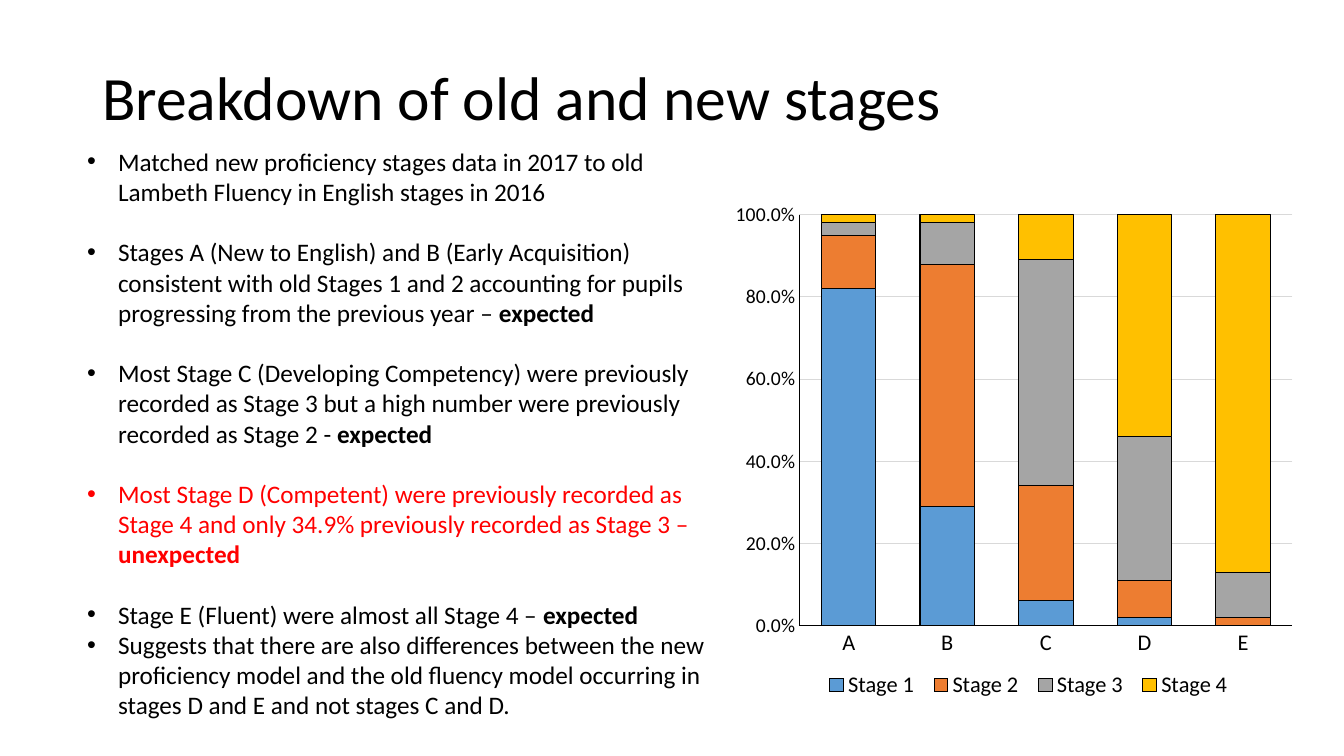
from lxml import etree
from pptx import Presentation
from pptx import util as u
from pptx.chart.data import CategoryChartData
from pptx.dml.color import RGBColor
from pptx.enum import chart as ch, text as tx
from pptx.oxml import ns

EMU_PER_PX = 914400 / 100.8
FONT = "Calibri"
BLACK, RED, GRID = "000000", "FF0000", "D9D9D9"
GAP = 21.5

FINDINGS = [
    ("Matched new proficiency stages data in 2017 to old "
     "Lambeth Fluency in English stages in 2016", "", BLACK, GAP),
    ("Stages A (New to English) and B (Early Acquisition) consistent with old "
     "Stages 1 and 2 accounting for pupils progressing from the previous year – ",
     "expected", BLACK, GAP),
    ("Most Stage C (Developing Competency) were previously recorded as Stage 3 "
     "but a high number were previously recorded as Stage 2 - ",
     "expected", BLACK, GAP),
    ("Most Stage D (Competent) were previously recorded as Stage 4 "
     "and only 34.9% previously recorded as Stage 3 – ", "unexpected", RED, GAP),
    ("Stage E (Fluent) were almost all Stage 4 – ", "expected", BLACK, 0),
    ("Suggests that there are also differences between the new proficiency model "
     "and the old fluency model occurring in stages D and E and not stages C and D.",
     "", BLACK, 0),
]

NEW_STAGES = ["A", "B", "C", "D", "E"]
OLD_STAGES = [
    ("Stage 1", "5B9BD5", [0.82, 0.29, 0.06, 0.02, 0]),
    ("Stage 2", "ED7D31", [0.13, 0.59, 0.28, 0.09, 0.02]),
    ("Stage 3", "A5A5A5", [0.03, 0.1, 0.55, 0.35, 0.11]),
    ("Stage 4", "FFC000", [0.02, 0.02, 0.11, 0.54, 0.87]),
]


def px(length):
    return u.Emu(round(length * EMU_PER_PX))


def rgb(hex_color):
    return RGBColor.from_string(hex_color)


def place(placeholder, left, top, width, height):
    placeholder.left, placeholder.top = px(left), px(top)
    placeholder.width, placeholder.height = px(width), px(height)


def set_font(font, size, color=BLACK, bold=False):
    font.name, font.size, font.bold = FONT, u.Pt(size), bold
    font.color.rgb = rgb(color)


def write(paragraph, words, **font_format):
    run = paragraph.add_run()
    run.text = words
    set_font(run.font, **font_format)


def set_line(line, color):
    line.color.rgb = rgb(color)
    line.width = u.Pt(0.75)


def add_heading(slide):
    heading = slide.shapes.title
    place(heading, 92, 41, 1159, 120)
    frame = heading.text_frame
    frame.auto_size = tx.MSO_AUTO_SIZE.NONE
    frame.vertical_anchor = tx.MSO_ANCHOR.MIDDLE
    paragraph = frame.paragraphs[0]
    paragraph.alignment = tx.PP_ALIGN.LEFT
    paragraph.line_spacing = 0.9
    write(paragraph, "Breakdown of old and new stages", size=44)


def add_findings(slide):
    findings = slide.placeholders[1]
    place(findings, 77, 141, 647, 621)
    frame = findings.text_frame
    frame.auto_size = tx.MSO_AUTO_SIZE.NONE
    for index, (finding, verdict, color, gap) in enumerate(FINDINGS):
        paragraph = frame.add_paragraph() if index else frame.paragraphs[0]
        indent = px(31)
        properties = paragraph._p.get_or_add_pPr()
        properties.set("marL", str(indent))
        properties.set("indent", str(-indent))
        paragraph.line_spacing = 1.0
        paragraph.space_before = u.Pt(0)
        paragraph.space_after = u.Pt(gap)
        write(paragraph, finding, size=18, color=color)
        if verdict:
            write(paragraph, verdict, size=18, color=color, bold=True)


def set_layout(part, position, **settings):
    for old_layout in part.findall(ns.qn("c:layout")):
        part.remove(old_layout)
    layout = etree.Element(ns.qn("c:layout"))
    manual = etree.SubElement(layout, ns.qn("c:manualLayout"))
    for tag, value in settings.items():
        etree.SubElement(manual, ns.qn(f"c:{tag}")).set("val", str(value))
    part.insert(position, layout)


def style_axis(axis, size):
    axis.major_tick_mark = axis.minor_tick_mark = ch.XL_TICK_MARK.NONE
    set_font(axis.tick_labels.font, size)
    set_line(axis.format.line, BLACK)


def add_stage_chart(slide):
    shares = CategoryChartData(number_format="0.0%")
    shares.categories = NEW_STAGES
    for stage, _, values in OLD_STAGES:
        shares.add_series(stage, values)
    chart = slide.shapes.add_chart(
        ch.XL_CHART_TYPE.COLUMN_STACKED, px(724), px(194), px(580), px(520), shares
    ).chart
    chart.has_title = False
    set_font(chart.font, 10)

    columns = chart.plots[0]
    columns.vary_by_categories = False
    columns.gap_width, columns.overlap = 81, 100
    for series, (_, color, _) in zip(columns.series, OLD_STAGES):
        series.format.fill.solid()
        series.format.fill.fore_color.rgb = rgb(color)
        set_line(series.format.line, BLACK)

    style_axis(chart.category_axis, 16)
    share_axis = chart.value_axis
    style_axis(share_axis, 14)
    share_axis.minimum_scale, share_axis.maximum_scale = 0, 1
    share_axis.major_unit = 0.2
    share_axis.tick_labels.number_format = "0.0%"
    share_axis.tick_labels.number_format_is_linked = False
    set_line(share_axis.major_gridlines.format.line, GRID)

    chart.has_legend = True
    legend = chart.legend
    legend.position = ch.XL_LEGEND_POSITION.BOTTOM
    legend.include_in_layout = False
    set_font(legend.font, 16)

    set_layout(chart._chartSpace.chart.plotArea, 0, layoutTarget="inner",
               xMode="edge", yMode="edge", x=0.13, y=0.04, w=0.85, h=0.79)
    set_layout(legend._element, 1,
               xMode="edge", yMode="edge", x=0.16, y=0.91, w=0.73, h=0.07)


def main():
    deck = Presentation()
    deck.slide_width, deck.slide_height = px(1344), px(756)
    slide = deck.slides.add_slide(deck.slide_layouts[1])
    add_heading(slide)
    add_findings(slide)
    add_stage_chart(slide)
    deck.save("out.pptx")


if __name__ == "__main__":
    main()
